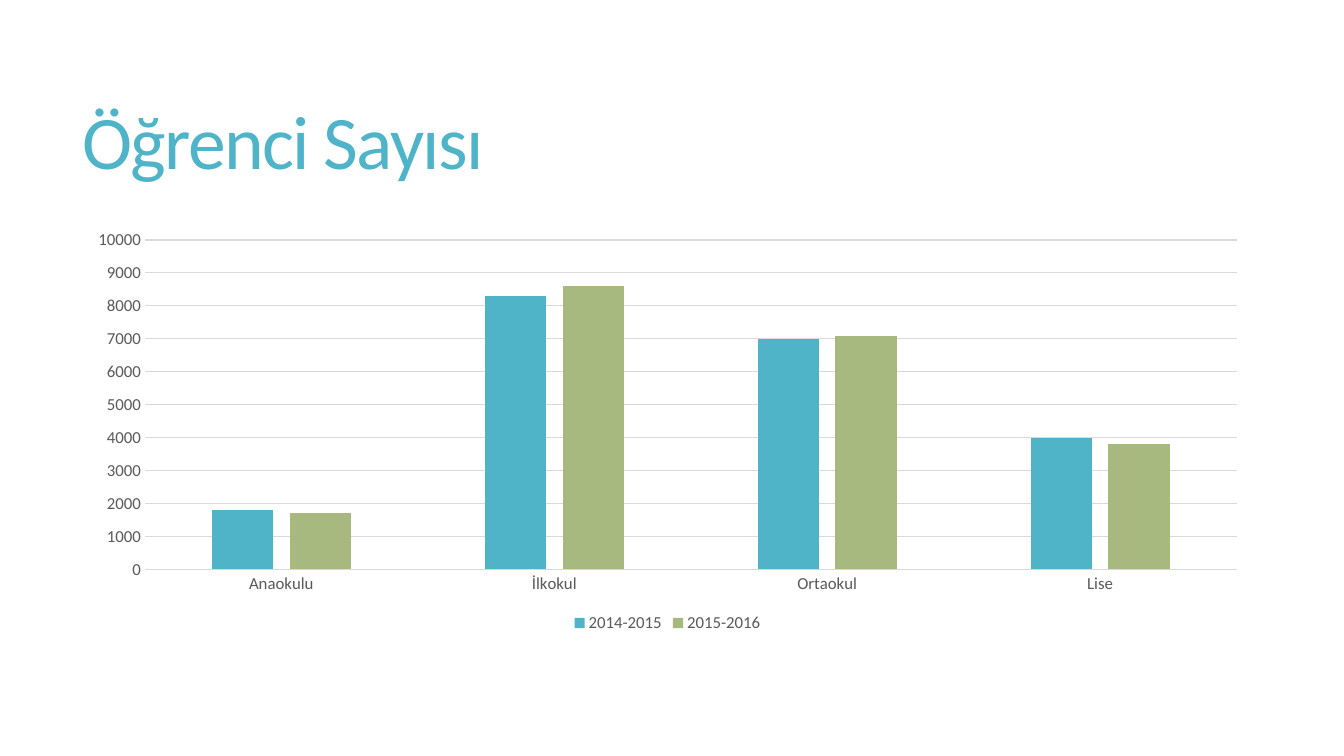
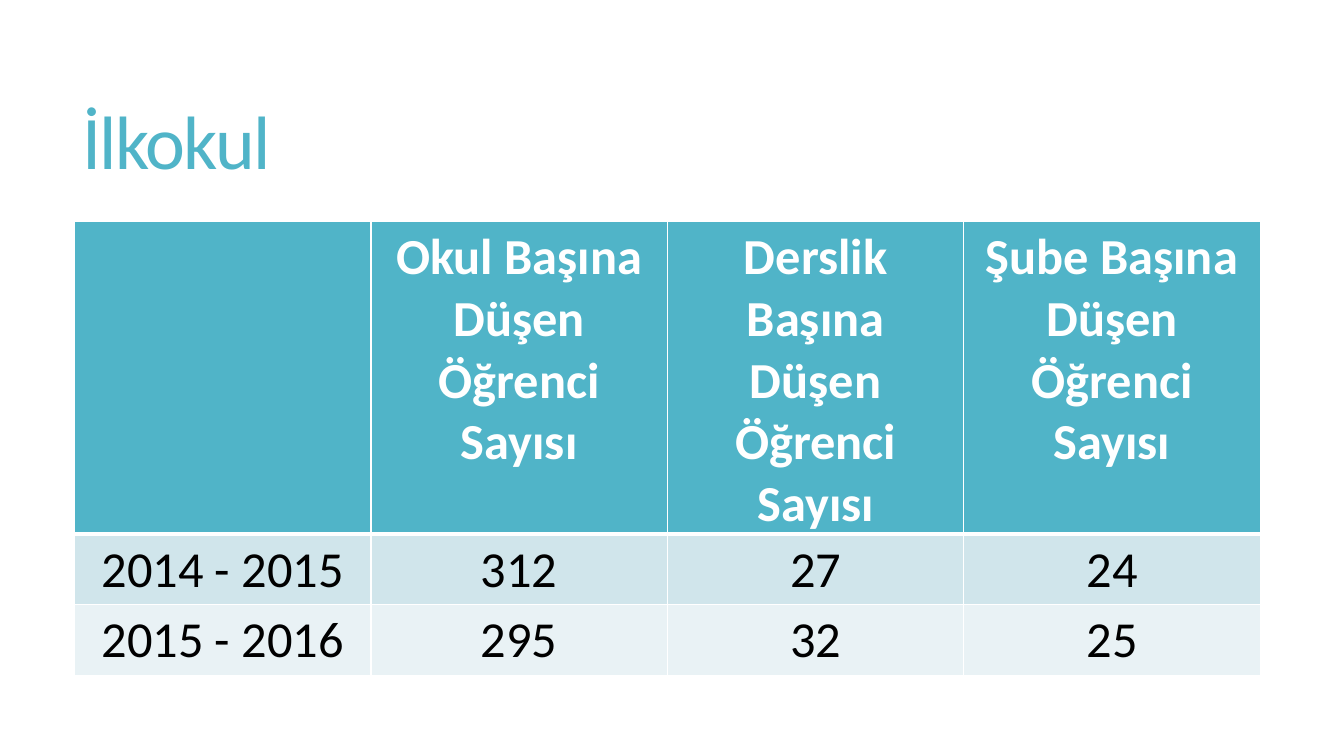
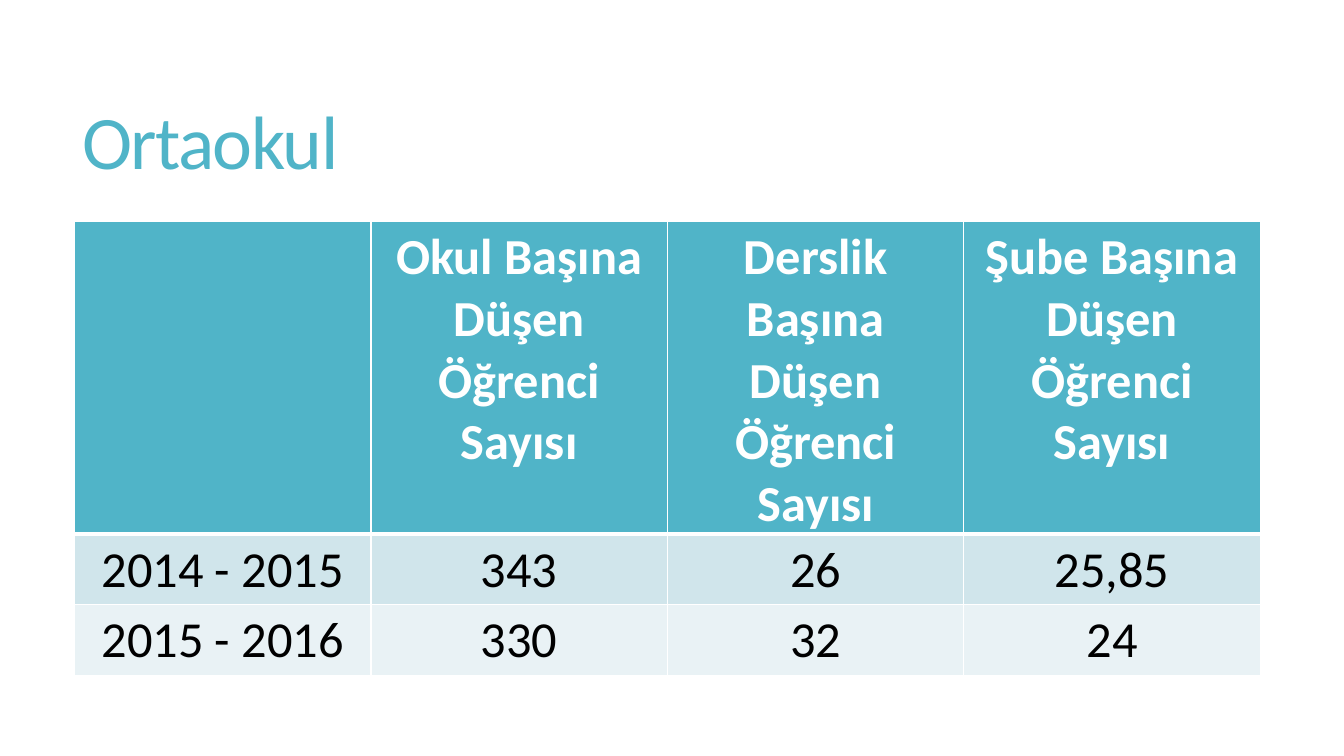
"""Build three slides on student numbers: one chart and two tables."""
from lxml.etree import SubElement
from pptx import Presentation
from pptx.chart.data import CategoryChartData
from pptx.dml.color import RGBColor
from pptx.enum.chart import XL_CHART_TYPE as ChartType, XL_LEGEND_POSITION as LegendPosition
from pptx.enum.chart import XL_TICK_MARK as TickMark
from pptx.enum.text import MSO_ANCHOR as Anchor, PP_ALIGN as Align
from pptx.oxml.ns import qn
from pptx.util import Inches, Pt

FONT = "Calibri"
COLORS = {
    "teal": "50B4C8",
    "green": "A8B97F",
    "white": "FFFFFF",
    "black": "000000",
    "gray": "595959",
    "grid": "D9D9D9",
    "band_dark": "D0E5EB",
    "band_light": "E9F2F5",
}
YEARS = ["2014 - 2015", "2015 - 2016"]
HEADERS = ["", "Okul Başına Düşen Öğrenci Sayısı", "Derslik Başına Düşen Öğrenci Sayısı",
           "Şube Başına Düşen Öğrenci Sayısı"]
RATIOS = {
    "İlkokul": [["312", "27", "24"], ["295", "32", "25"]],
    "Ortaokul": [["343", "26", "25,85"], ["330", "32", "24"]],
}
STUDENTS = {
    "2014-2015": ("teal", [1800, 8300, 7000, 4000]),
    "2015-2016": ("green", [1700, 8600, 7100, 3800]),
}
CONTENT_LEFT, CONTENT_TOP, CONTENT_WIDTH = Inches(0.74), Inches(2.2), Inches(11.76)


def write_text(frame, text, size, color, bold=False, align=Align.LEFT, line_spacing=None, tracking=None):
    frame.word_wrap = True
    paragraph = frame.paragraphs[0]
    paragraph.alignment = align
    paragraph.line_spacing = line_spacing
    run = paragraph.add_run()
    run.text = text
    run.font.name = FONT
    run.font.size = Pt(size)
    run.font.bold = bold
    run.font.color.rgb = RGBColor.from_string(COLORS[color])
    if tracking is not None:
        run.font._element.set("spc", str(int(tracking * 100)))


def add_cell_border(cell, side, width):
    line = SubElement(cell._tc.get_or_add_tcPr(), qn(f"a:ln{side}"), w=str(Pt(width)))
    fill = SubElement(line, qn("a:solidFill"))
    SubElement(fill, qn("a:srgbClr"), val=COLORS["white"])


presentation = Presentation()
presentation.slide_width = Inches(13.33)
presentation.slide_height = Inches(7.5)

slides = {}
for title in ["Öğrenci Sayısı", *RATIOS]:
    slide = presentation.slides.add_slide(presentation.slide_layouts[6])
    title_box = slide.shapes.add_textbox(Inches(0.72), Inches(0.55), Inches(11.78), Inches(1.81))
    title_box.text_frame.vertical_anchor = Anchor.MIDDLE
    write_text(title_box.text_frame, title, size=54, color="teal", line_spacing=0.85, tracking=-1.2)
    slides[title] = slide

chart_data = CategoryChartData()
chart_data.categories = ["Anaokulu", "İlkokul", "Ortaokul", "Lise"]
for year, (color, values) in STUDENTS.items():
    chart_data.add_series(year, values)
chart = slides["Öğrenci Sayısı"].shapes.add_chart(
    ChartType.COLUMN_CLUSTERED, CONTENT_LEFT, CONTENT_TOP, CONTENT_WIDTH, Inches(4.12), chart_data).chart
chart.has_title = False
chart.has_legend = True
chart.legend.position = LegendPosition.BOTTOM
chart.legend.include_in_layout = False

plot = chart.plots[0]
plot.vary_by_categories = False
plot.gap_width = 219
plot.overlap = -27
for series, (color, values) in zip(plot.series, STUDENTS.values()):
    series.format.fill.solid()
    series.format.fill.fore_color.rgb = RGBColor.from_string(COLORS[color])

category_axis, value_axis = chart.category_axis, chart.value_axis
for axis in (category_axis, value_axis):
    axis.major_tick_mark = TickMark.NONE
    axis.minor_tick_mark = TickMark.NONE
value_axis.minimum_scale = 0
value_axis.maximum_scale = 10000
value_axis.major_unit = 1000
value_axis.has_major_gridlines = True
value_axis.format.line.fill.background()
for line in (category_axis.format.line, value_axis.major_gridlines.format.line):
    line.color.rgb = RGBColor.from_string(COLORS["grid"])
    line.width = Pt(0.75)
for font in (chart.font, chart.legend.font, category_axis.tick_labels.font, value_axis.tick_labels.font):
    font.name = FONT
    font.size = Pt(12)
    font.color.rgb = RGBColor.from_string(COLORS["gray"])

ROW_FILLS = ["teal", "band_dark", "band_light"]
for title, ratios in RATIOS.items():
    rows = [HEADERS] + [[year, *values] for year, values in zip(YEARS, ratios)]
    row_height = Inches(0.41)
    table = slides[title].shapes.add_table(
        len(rows), len(HEADERS), CONTENT_LEFT, CONTENT_TOP, CONTENT_WIDTH, row_height * len(rows)).table
    for row_index, row in enumerate(rows):
        is_header = row_index == 0
        for column_index, text in enumerate(row):
            cell = table.cell(row_index, column_index)
            top_width = 3 if row_index == 1 else 1
            bottom_width = 3 if is_header else 1
            for side, width in {"L": 1, "R": 1, "T": top_width, "B": bottom_width}.items():
                add_cell_border(cell, side, width)
            cell.fill.solid()
            cell.fill.fore_color.rgb = RGBColor.from_string(COLORS[ROW_FILLS[row_index]])
            if text:
                write_text(cell.text_frame, text, size=36, color="white" if is_header else "black",
                           bold=is_header, align=Align.CENTER)

presentation.save("out.pptx")
